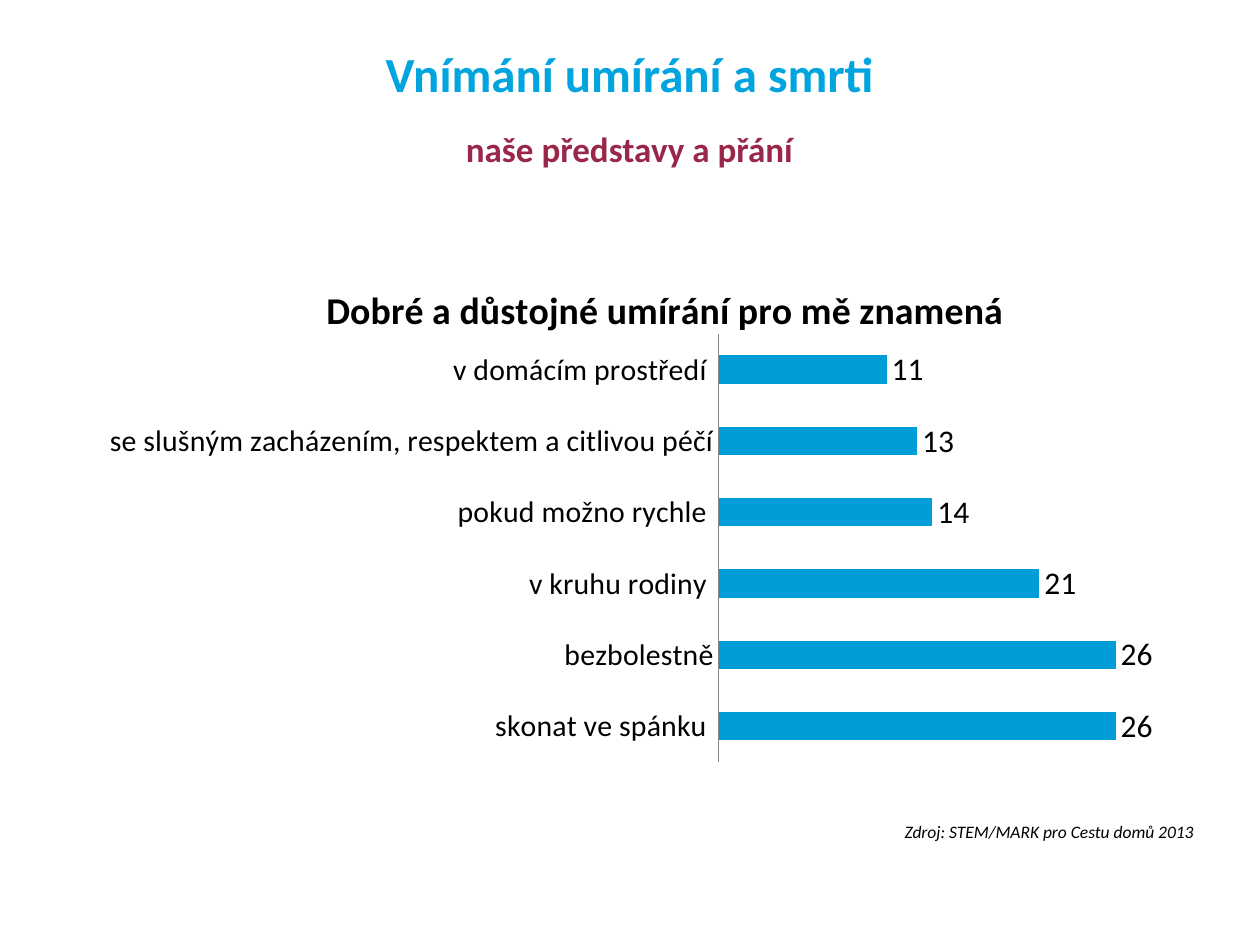
"""Build a slide with a bar chart on what a good and dignified death means."""
from lxml import etree
from pptx import Presentation
from pptx import util as u
from pptx.chart.data import CategoryChartData
from pptx.dml.color import RGBColor
from pptx.enum import chart as ch, text
from pptx.oxml import parse_xml

PX = 914400 / 126
FONT = "Calibri"
COLORS = {"title": "00A4DE", "subtitle": "9A264A", "bar": "009DD9",
          "text": "000000", "axis": "868686"}
ANSWERS = {
    "skonat ve spánku ": 26,
    "bezbolestně": 26,
    "v kruhu rodiny ": 21,
    "pokud možno rychle ": 14,
    "se slušným zacházením, respektem a citlivou péčí": 13,
    "v domácím prostředí ": 11,
}


def style(font, size, color="text", bold=False, italic=False):
    font.name, font.size = FONT, u.Pt(size)
    font.bold, font.italic = bold, italic
    font.color.rgb = RGBColor.from_string(COLORS[color])


def layout_xml(target, **fractions):
    namespace = "http://schemas.openxmlformats.org/drawingml/2006/chart"
    modes = {"xMode": "edge", "yMode": "edge"}
    if target:
        modes = {"layoutTarget": target, **modes}
    values = "".join(f'<c:{key} val="{value}"/>' for key, value in {**modes, **fractions}.items())
    return parse_xml(f'<c:layout xmlns:c="{namespace}"><c:manualLayout>{values}</c:manualLayout></c:layout>')


deck = Presentation()
deck.slide_width, deck.slide_height = u.Inches(10), u.Inches(7.5)
page = deck.slides.add_slide(deck.slide_layouts[5])

title = page.shapes.title
title.left, title.top, title.width, title.height = [round(n * PX) for n in (370, 37, 519, 140)]
frame = title.text_frame
frame.word_wrap = False
frame.auto_size = text.MSO_AUTO_SIZE.NONE
frame.vertical_anchor = text.MSO_ANCHOR.TOP
frame.text = "Vnímání umírání a smrti\nnaše představy a přání"
for para, size, color, gap in zip(frame.paragraphs, (28, 20), ("title", "subtitle"), (0, 14.6)):
    para.alignment = text.PP_ALIGN.CENTER
    para.space_before = u.Pt(gap)
    style(para.runs[0].font, size, color, bold=True)

source = page.shapes.add_textbox(*[round(n * PX) for n in (878, 815, 328, 34)])
source.text_frame.word_wrap = True
para = source.text_frame.paragraphs[0]
para.alignment = text.PP_ALIGN.RIGHT
span = para.add_run()
span.text = "Zdroj: STEM/MARK pro Cestu domů 2013"
style(span.font, 10, italic=True)

data = CategoryChartData(number_format="General")
data.categories = list(ANSWERS)
data.add_series("Series 1", list(ANSWERS.values()))
chart = page.shapes.add_chart(ch.XL_CHART_TYPE.BAR_CLUSTERED,
                              *[round(n * PX) for n in (-253, 255, 1468, 528)], data).chart
style(chart.font, 18)
chart.has_legend = False

chart.has_title = True
heading = chart.chart_title
heading.text_frame.text = "Dobré a důstojné umírání pro mě znamená"
style(heading.text_frame.paragraphs[0].runs[0].font, 21.6, bold=True)
heading.include_in_layout = False
for old in heading._element.xpath("c:layout"):
    heading._element.remove(old)
heading._element.xpath("c:tx")[0].addnext(layout_xml(None, x=0.39, y=0.04))

area = chart._chartSpace.xpath("c:chart/c:plotArea")[0]
for old in area.xpath("c:layout"):
    area.remove(old)
area.insert(0, layout_xml("inner", wMode="factor", hMode="factor",
                          x=0.662, y=0.15, w=0.312, h=0.81))

answers = chart.category_axis
answers.major_tick_mark = answers.minor_tick_mark = ch.XL_TICK_MARK.NONE
answers.has_major_gridlines = False
style(answers.tick_labels.font, 17)
answers.format.line.color.rgb = RGBColor.from_string(COLORS["axis"])
answers.format.line.width = u.Pt(0.75)

percent = chart.value_axis
percent.minimum_scale, percent.maximum_scale = 0, 30
percent.has_major_gridlines = False
percent.visible = False

plot = chart.plots[0]
plot.gap_width, plot.overlap = 150, -25
plot.vary_by_categories = False
bars = plot.series[0]
bars.format.fill.solid()
bars.format.fill.fore_color.rgb = RGBColor.from_string(COLORS["bar"])
labels = bars.data_labels
labels.show_value = True
labels.position = ch.XL_LABEL_POSITION.OUTSIDE_END
style(labels.font, 18)

deck.save("out.pptx")
